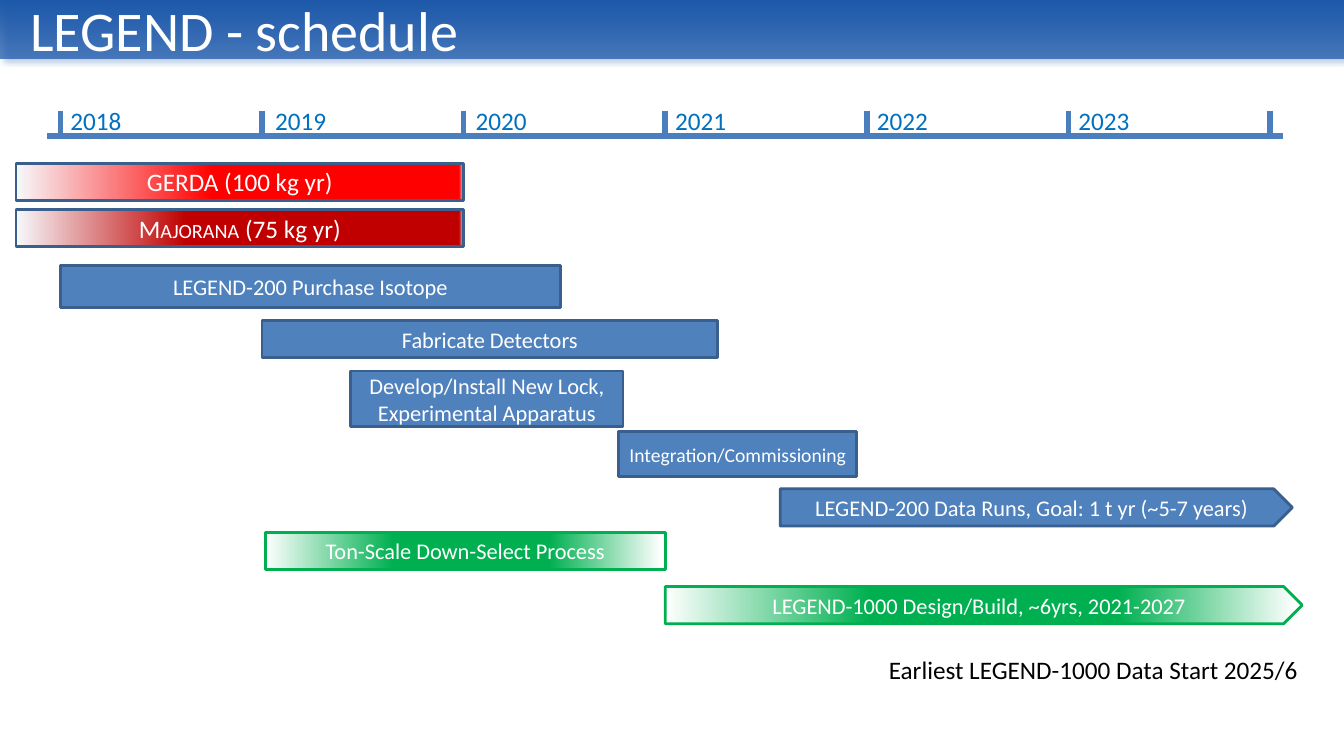
"""Builds the LEGEND schedule slide: a year axis above a chart of project bars."""
from lxml import etree
from pptx import Presentation
from pptx.dml.color import RGBColor
from pptx.enum.shapes import MSO_CONNECTOR, MSO_SHAPE
from pptx.enum.text import MSO_ANCHOR, PP_ALIGN
from pptx.oxml.ns import qn
from pptx.util import Pt

RECT = MSO_SHAPE.RECTANGLE
ARROW = MSO_SHAPE.PENTAGON
STRAIGHT = MSO_CONNECTOR.STRAIGHT
MIDDLE = MSO_ANCHOR.MIDDLE
CENTER = PP_ALIGN.CENTER

BLUE, BLUE_EDGE, GREEN = "4F81BD", "3A5F8C", "00B050"
BANNER, AXIS, YEAR, WHITE, BLACK = "1C58AA", "4B7EBC", "0070C0", "FFFFFF", "000000"
GERDA_FADE = [(0, "F6F9FC"), (44, "FF0000"), (99, "FF0000"), (100, "CAD9EB")]
MAJORANA_FADE = [(0, "F6F9FC"), (38, "C00000"), (99, "C00000"), (100, "CAD9EB")]
GREEN_FADE = [(0, WHITE), (32, GREEN), (71, GREEN), (99, WHITE)]

AXIS_START, YEAR_WIDTH = 43.2, 144
YEAR_LEFTS = {"2018": 43.2, "2019": 189.4, "2020": 332.6,
              "2021": 475.2, "2022": 619.2, "2023": 763.2}

BARS = [
    ("LEGEND-200 Purchase Isotope", (43.2, 189.4, 357.1, 30.2), RECT, BLUE, BLUE_EDGE, 16),
    ("Fabricate Detectors", (187.2, 229, 325.4, 26.6), RECT, BLUE, BLUE_EDGE, 16),
    ("Develop/Install New Lock, Experimental Apparatus",
     (250.6, 265, 194.4, 39.6), RECT, BLUE, BLUE_EDGE, 16),
    ("Integration/Commissioning", (442.1, 308.2, 169.9, 32.4), RECT, BLUE, BLUE_EDGE, 14),
    ("LEGEND-200 Data Runs, Goal: 1 t yr (~5-7 years)",
     (557.3, 349.2, 365.8, 26.6), ARROW, BLUE, BLUE_EDGE, 16),
    ("GERDA (100 kg yr)", (11.5, 116.6, 319.7, 26.6), RECT, GERDA_FADE, BLUE_EDGE, 18),
    ("Ton-Scale Down-Select Process", (189.4, 380.2, 285.8, 26.6), RECT, GREEN_FADE, GREEN, 16),
    ("LEGEND-1000 Design/Build, ~6yrs, 2021-2027",
     (475.2, 419, 455, 26.6), ARROW, GREEN_FADE, GREEN, 16),
]


def color(value):
    return RGBColor.from_string(value)


def add_color(parent, value, opacity=100):
    node = etree.SubElement(parent, qn("a:srgbClr"), val=value)
    if opacity < 100:
        etree.SubElement(node, qn("a:alpha"), val=str(opacity * 1000))


class Schedule:
    font = "Calibri"

    def __init__(self, slide):
        self.shapes = slide.shapes

    def style(self, paragraph, size, ink):
        for run in paragraph.runs:
            run.font.name = self.font
            run.font.size = Pt(size)
            run.font.color.rgb = color(ink)

    def fade(self, shape, stops, angle=0):
        shape.fill.gradient()
        shape.fill.gradient_angle = angle
        stop_list = shape._element.spPr.find(qn("a:gradFill")).find(qn("a:gsLst"))
        for stop in list(stop_list):
            stop_list.remove(stop)
        for position, *tint in stops:
            stop = etree.SubElement(stop_list, qn("a:gs"), pos=str(position * 1000))
            add_color(stop, *tint)

    def banner(self, width, height):
        band = self.shapes.add_shape(RECT, 0, 0, Pt(width), Pt(height))
        band.line.fill.background()
        self.fade(band, [(0, BANNER, 72), (100, BANNER)], angle=90)
        band.shadow.inherit = False
        effects = band._element.spPr.find(qn("a:effectLst"))
        glow = etree.SubElement(effects, qn("a:outerShdw"), blurRad=str(Pt(4)),
                                dist=str(Pt(3)), dir="2700000", rotWithShape="0")
        add_color(glow, BANNER, 40)

    def text(self, words, box, size, ink, wrap=False):
        label = self.shapes.add_textbox(*map(Pt, box))
        frame = label.text_frame
        frame.word_wrap = wrap
        frame.text = words
        self.style(frame.paragraphs[0], size, ink)
        return frame

    def line(self, x1, y1, x2, y2):
        rule = self.shapes.add_connector(STRAIGHT, *map(Pt, (x1, y1, x2, y2)))
        rule.line.color.rgb = color(AXIS)
        rule.line.width = Pt(4)
        etree.SubElement(rule._element.spPr, qn("a:effectLst"))

    def bar(self, words, box, outline, fill, edge, size):
        task = self.shapes.add_shape(outline, *map(Pt, box))
        task.shadow.inherit = False
        if isinstance(fill, list):
            self.fade(task, fill)
        else:
            task.fill.solid()
            task.fill.fore_color.rgb = color(fill)
        task.line.color.rgb = color(edge)
        task.line.width = Pt(2)
        frame = task.text_frame
        frame.word_wrap = True
        frame.vertical_anchor = MIDDLE
        paragraph = frame.paragraphs[0]
        paragraph.alignment = CENTER
        for part in [words] if isinstance(words, str) else words:
            paragraph.add_run().text = part
        self.style(paragraph, size, WHITE)
        return paragraph


def main():
    deck = Presentation()
    deck.slide_width, deck.slide_height = Pt(960), Pt(540)
    schedule = Schedule(deck.slides.add_slide(deck.slide_layouts[6]))

    schedule.banner(960, 41.8)
    title = schedule.text("LEGEND - schedule", (0, 0, 960, 41.8), 40, WHITE, wrap=True)
    title.vertical_anchor = MIDDLE
    title.margin_left = Pt(21.6)

    schedule.line(33.8, 97.2, 916.6, 97.2)
    for index in range(len(YEAR_LEFTS) + 1):
        tick = AXIS_START + index * YEAR_WIDTH
        schedule.line(tick, 79.2, tick, 98.6)
    for year, left in YEAR_LEFTS.items():
        schedule.text(year, (left, 72, 51.1, 28.8), 18, YEAR)

    for task in BARS:
        schedule.bar(*task)
    majorana = schedule.bar(["Majorana", " (75 kg yr)"], (11.5, 149.8, 319.7, 26.6),
                            RECT, MAJORANA_FADE, BLUE_EDGE, 18)
    majorana.runs[0]._r.get_or_add_rPr().set("cap", "small")

    schedule.text("Earliest LEGEND-1000 Data Start 2025/6",
                  (627.8, 463.7, 309.6, 28.8), 18, BLACK)
    deck.save("out.pptx")


if __name__ == "__main__":
    main()
